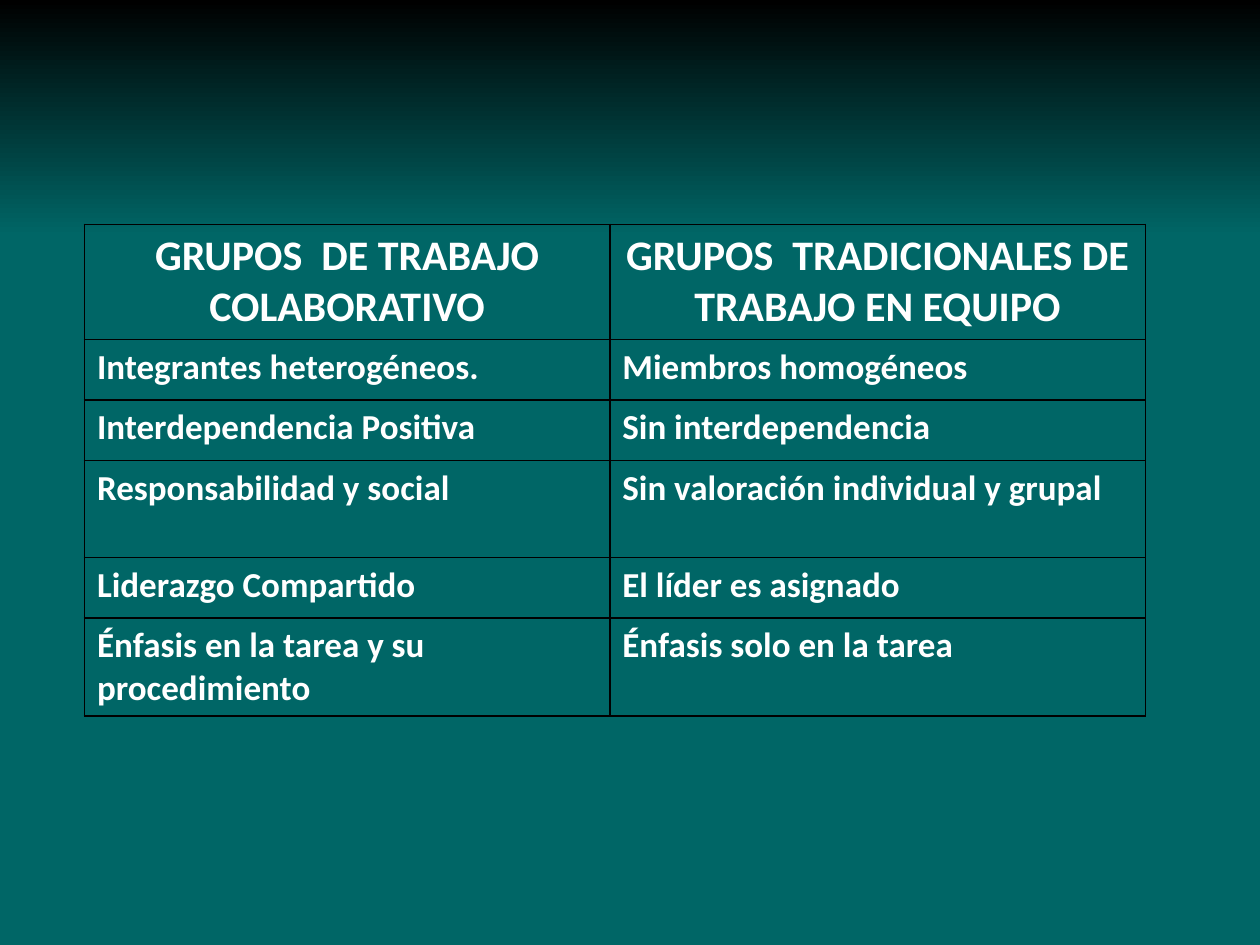
from lxml import etree
from pptx import Presentation
from pptx.dml.color import RGBColor as RGB
from pptx.enum.text import PP_ALIGN as Align
from pptx.oxml import parse_xml
from pptx.oxml.ns import nsdecls, qn
from pptx.util import Inches, Pt

COLORS = {"text": "FFFFFF", "border": "000000", "top": "000000", "base": "006666"}

COLUMN_WIDTHS = [4.17, 4.25]
ONE_LINE, TWO_LINES, HEADER = 0.48, 0.77, 0.9
ROWS = [
    (HEADER, "GRUPOS  DE TRABAJO COLABORATIVO",
     "GRUPOS  TRADICIONALES DE TRABAJO EN EQUIPO"),
    (ONE_LINE, "Integrantes heterogéneos.", "Miembros homogéneos"),
    (ONE_LINE, "Interdependencia Positiva", "Sin interdependencia"),
    (TWO_LINES, "Responsabilidad y social", "Sin valoración individual y grupal"),
    (ONE_LINE, "Liderazgo Compartido", "El líder es asignado"),
    (TWO_LINES, "Énfasis en la tarea y su procedimiento", "Énfasis solo en la tarea"),
]


class SlideBuilder:
    font = "Calibri"
    header_size = Pt(24)
    body_size = Pt(20)
    border_width = Pt(1)

    def __init__(self, slide):
        self.s = slide

    def background(self, stops):
        """Fill the background from top to bottom with (percent, colour) stops."""
        fill = self.s.background.fill
        fill.gradient()
        fill.gradient_angle = 270
        gs_list = next(self.s._element.iter(qn("a:gsLst")))
        for gs in list(gs_list):
            gs_list.remove(gs)
        for percent, color in stops:
            gs = etree.SubElement(gs_list, qn("a:gs"), pos=str(percent * 1000))
            etree.SubElement(gs, qn("a:srgbClr"), val=COLORS[color])

    def borders(self, cell):
        tc_pr = cell._tc.get_or_add_tcPr()
        for side in "LRTB":
            tc_pr.append(parse_xml(
                f'<a:ln{side} {nsdecls("a")} w="{self.border_width}"><a:solidFill>'
                f'<a:srgbClr val="{COLORS["border"]}"/></a:solidFill></a:ln{side}>'))

    def cell(self, cell, text, header):
        self.borders(cell)
        cell.fill.background()
        p = cell.text_frame.paragraphs[0]
        p.text = text
        p.alignment = Align.CENTER if header else Align.LEFT
        p.font.name = self.font
        p.font.size = self.header_size if header else self.body_size
        p.font.bold = True
        p.font.color.rgb = RGB.from_string(COLORS["text"])

    def table(self, left, top, widths, rows):
        height = sum(row[0] for row in rows)
        table = self.s.shapes.add_table(
            len(rows), len(widths), Inches(left), Inches(top),
            Inches(sum(widths)), Inches(height)).table
        table.horz_banding = False
        for column, width in zip(table.columns, widths):
            column.width = Inches(width)
        for i, (row_height, *texts) in enumerate(rows):
            table.rows[i].height = Inches(row_height)
            for j, text in enumerate(texts):
                self.cell(table.cell(i, j), text, header=i == 0)


def main():
    prs = Presentation()
    prs.slide_width, prs.slide_height = Inches(10), Inches(7.5)
    builder = SlideBuilder(prs.slides.add_slide(prs.slide_layouts[6]))
    builder.background([(0, "top"), (25, "base"), (100, "base")])
    builder.table(0.67, 1.78, COLUMN_WIDTHS, ROWS)
    prs.save("out.pptx")


if __name__ == "__main__":
    main()
